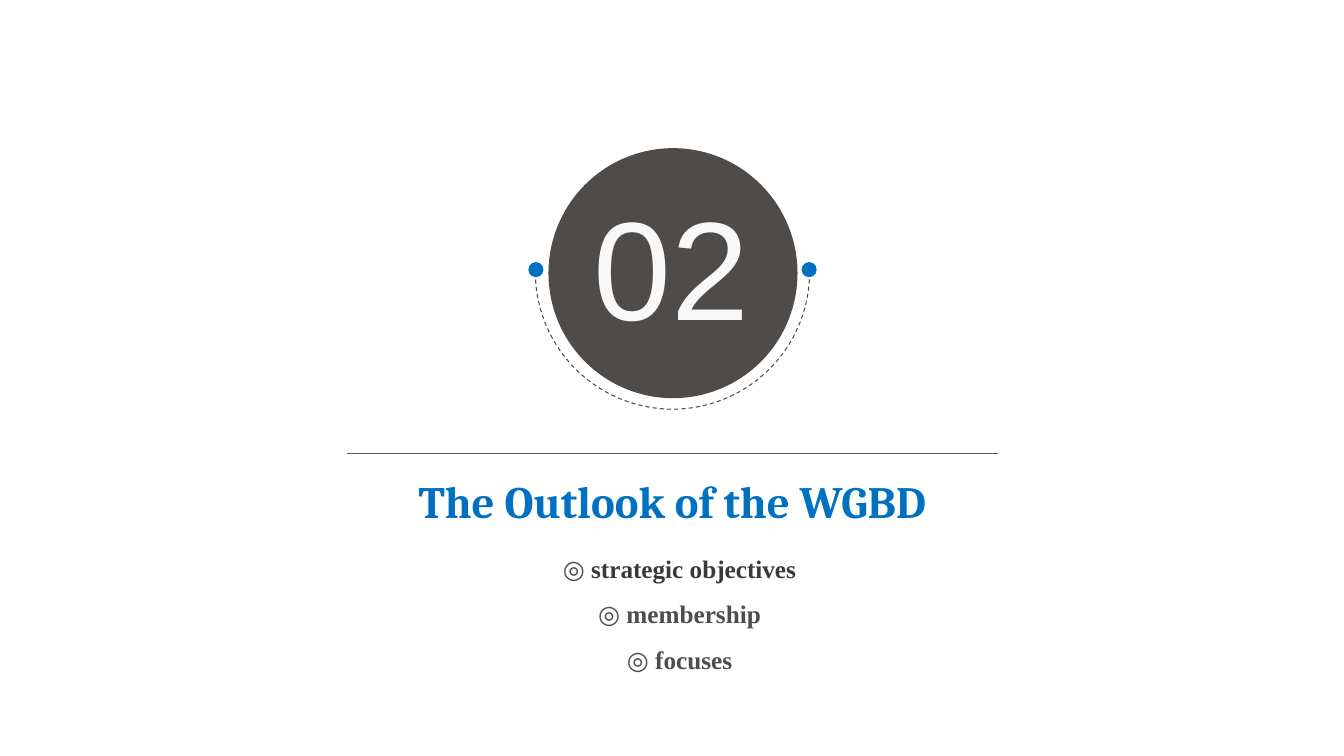
from math import cos, pi, sin

from lxml import etree
from pptx import Presentation
from pptx.dml.color import RGBColor
from pptx.enum import dml, shapes, text
from pptx.oxml.ns import qn
from pptx.util import Inches, Pt

DARK, BLUE, GREY = "4E4B49", "0070C0", "4D4D4D"
MID, HUB = 6.67, 2.7  # centre of the badge and its arc


def color(code):
    return RGBColor.from_string(code)


def box(*sizes):
    return [Inches(size) for size in sizes]


def disc(slide, x, y, wide, high, fill):
    dot = slide.shapes.add_shape(shapes.MSO_SHAPE.OVAL, *box(x, y, wide, high))
    dot.shadow.inherit = False
    dot.fill.solid()
    dot.fill.fore_color.rgb = color(fill)
    dot.line.fill.background()


def arc(slide, radius, steps=60):
    """Draw the dashed lower half circle from right to left."""
    points = [(Inches(MID + radius * cos(pi * i / steps)),
               Inches(HUB + radius * sin(pi * i / steps)))
              for i in range(steps + 1)]
    pen = slide.shapes.build_freeform(*points[0])
    pen.add_line_segments(points[1:], close=False)
    curve = pen.convert_to_shape()
    curve.shadow.inherit = False
    curve.fill.background()
    curve.line.color.rgb = color(DARK)
    curve.line.width = Pt(0)
    curve.line.dash_style = dml.MSO_LINE.DASH


def rule(slide, left, right, y):
    line = slide.shapes.add_connector(
        shapes.MSO_CONNECTOR.STRAIGHT, *box(left, y, right, y))
    line.line.color.rgb = color("595959")
    line.line.width = Pt(0.75)
    etree.SubElement(line._element.spPr, qn("a:effectLst"))


def label(slide, place, rows, font, align, wrap=False, gap=None):
    """Write rows of (words, colour) runs with one shared font."""
    frame = slide.shapes.add_textbox(*box(*place)).text_frame
    frame.word_wrap = wrap
    frame.auto_size = text.MSO_AUTO_SIZE.SHAPE_TO_FIT_TEXT
    for i, row in enumerate(rows):
        para = frame.add_paragraph() if i else frame.paragraphs[0]
        para.alignment = align
        para.line_spacing = gap
        for words, tint in row:
            run = para.add_run()
            run.text = words
            run.font.color.rgb = color(tint)
            for key, value in font.items():
                setattr(run.font, key, value)


def main():
    deck = Presentation()
    deck.slide_width, deck.slide_height = box(13.33, 7.5)
    slide = deck.slides.add_slide(deck.slide_layouts[6])
    left, center = text.PP_ALIGN.LEFT, text.PP_ALIGN.CENTER

    # Number badge with its arc and end dots
    disc(slide, 5.44, 1.47, 2.47, 2.48, DARK)
    arc(slide, 1.36)
    for x in (7.95, 5.24):
        disc(slide, x, 2.6, 0.15, 0.15, BLUE)
    label(slide, (5.79, 1.74, 1.8, 1.78), [[("02", "F8F8F8")]],
          {"name": "Arial", "size": Pt(100)}, left)

    # Section title under the rule
    rule(slide, 3.44, 9.9, 4.5)
    label(slide, (3.95, 4.65, 5.44, 0.64), [[("The Outlook of the WGBD", BLUE)]],
          {"name": "Cambria", "size": Pt(32), "bold": True}, center)

    # Topics
    topics = [("strategic objectives", "3B3838"), ("membership", GREY),
              ("focuses", GREY)]
    label(slide, (3.59, 5.29, 6.3, 1.92),
          [[("◎ ", GREY), topic] for topic in topics],
          {"name": "Times New Roman", "size": Pt(18), "bold": True},
          center, wrap=True, gap=1.5)

    deck.save("out.pptx")


if __name__ == "__main__":
    main()
